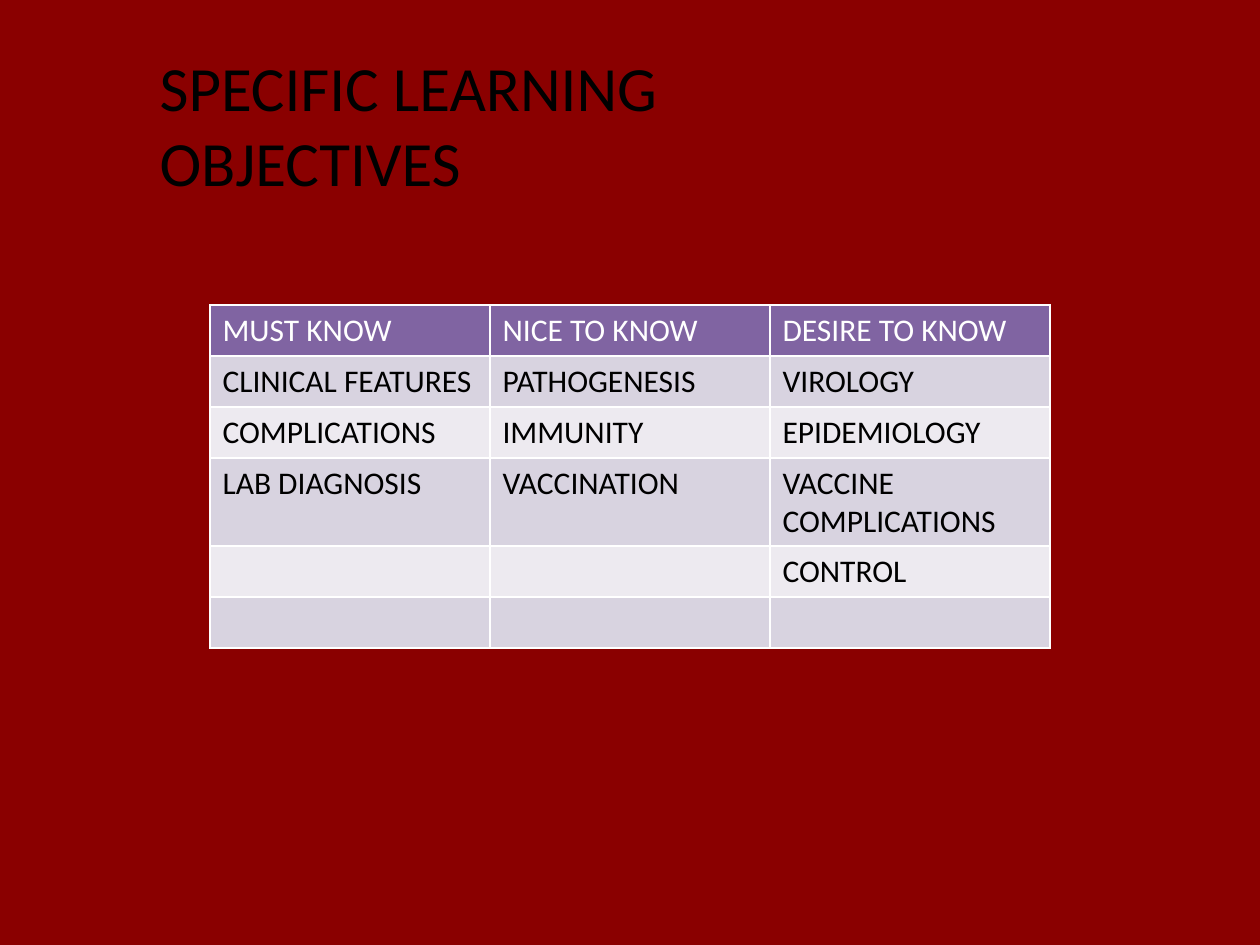
from typing import NamedTuple

from lxml import etree
from pptx import Presentation
from pptx.dml.color import RGBColor
from pptx.enum.text import MSO_ANCHOR, MSO_AUTO_SIZE, PP_ALIGN
from pptx.oxml.ns import qn
from pptx.util import Emu, Pt

LEFT = PP_ALIGN.LEFT
TOP = MSO_ANCHOR.TOP
FIT_SHAPE = MSO_AUTO_SIZE.SHAPE_TO_FIT_TEXT

EMU_PER_PX = 914400 / 126
FONT = "Calibri"
COLORS = {
    "background": "8A0000",
    "black": "000000",
    "white": "FFFFFF",
    "header": "8064A2",
    "band_dark": "D8D3E0",
    "band_light": "EDEAF0",
}
COLUMN_WIDTH = 280
ROW_HEIGHT = 51
BORDER_SIDES = ("a:lnL", "a:lnR", "a:lnT", "a:lnB")


class ObjectiveRow(NamedTuple):
    texts: tuple[str, str, str]
    fill: str
    color: str = "black"


ROWS = [
    ObjectiveRow(("MUST KNOW", "NICE TO KNOW", "DESIRE TO KNOW"), "header", "white"),
    ObjectiveRow(("CLINICAL FEATURES", "PATHOGENESIS", "VIROLOGY"), "band_dark"),
    ObjectiveRow(("COMPLICATIONS", "IMMUNITY", "EPIDEMIOLOGY"), "band_light"),
    ObjectiveRow(("LAB DIAGNOSIS", "VACCINATION", "VACCINE COMPLICATIONS"), "band_dark"),
    ObjectiveRow(("", "", "CONTROL"), "band_light"),
    ObjectiveRow(("", "", ""), "band_dark"),
]


def px(length: int) -> Emu:
    return Emu(round(length * EMU_PER_PX))


def rgb(name: str) -> RGBColor:
    return RGBColor.from_string(COLORS[name])


def format_text(text_frame, size: int, color: str) -> None:
    for paragraph in text_frame.paragraphs:
        paragraph.alignment = LEFT
        for run in paragraph.runs:
            run.font.name = FONT
            run.font.size = Pt(size)
            run.font.bold = False
            run.font.color.rgb = rgb(color)


def add_borders(cell) -> None:
    properties = cell._tc.get_or_add_tcPr()
    for side in BORDER_SIDES:
        line = etree.SubElement(properties, qn(side), w=str(Pt(1)))
        fill = etree.SubElement(line, qn("a:solidFill"))
        etree.SubElement(fill, qn("a:srgbClr"), val=COLORS["white"])


def draw_title(slide, text: str) -> None:
    title = slide.shapes.title
    title.left, title.top, title.width, title.height = map(px, (147, 42, 609, 165))
    text_frame = title.text_frame
    text_frame.text = text
    text_frame.word_wrap = True
    text_frame.auto_size = FIT_SHAPE
    text_frame.vertical_anchor = TOP
    format_text(text_frame, 36, "black")


def draw_table(slide, rows: list[ObjectiveRow]) -> None:
    column_count = len(rows[0].texts)
    table = slide.shapes.add_table(
        len(rows), column_count, px(210), px(305),
        px(column_count * COLUMN_WIDTH), px(len(rows) * ROW_HEIGHT),
    ).table
    for column in table.columns:
        column.width = px(COLUMN_WIDTH)
    for table_row, row in zip(table.rows, rows):
        table_row.height = px(ROW_HEIGHT)
        for cell, text in zip(table_row.cells, row.texts):
            add_borders(cell)
            cell.fill.solid()
            cell.fill.fore_color.rgb = rgb(row.fill)
            if text:
                cell.text_frame.text = text
                format_text(cell.text_frame, 18, row.color)


def main() -> None:
    presentation = Presentation()
    presentation.slide_width = px(1260)
    presentation.slide_height = px(945)
    slide = presentation.slides.add_slide(presentation.slide_layouts[5])
    slide.background.fill.solid()
    slide.background.fill.fore_color.rgb = rgb("background")
    draw_title(slide, "SPECIFIC LEARNING OBJECTIVES")
    draw_table(slide, ROWS)
    presentation.save("out.pptx")


if __name__ == "__main__":
    main()
